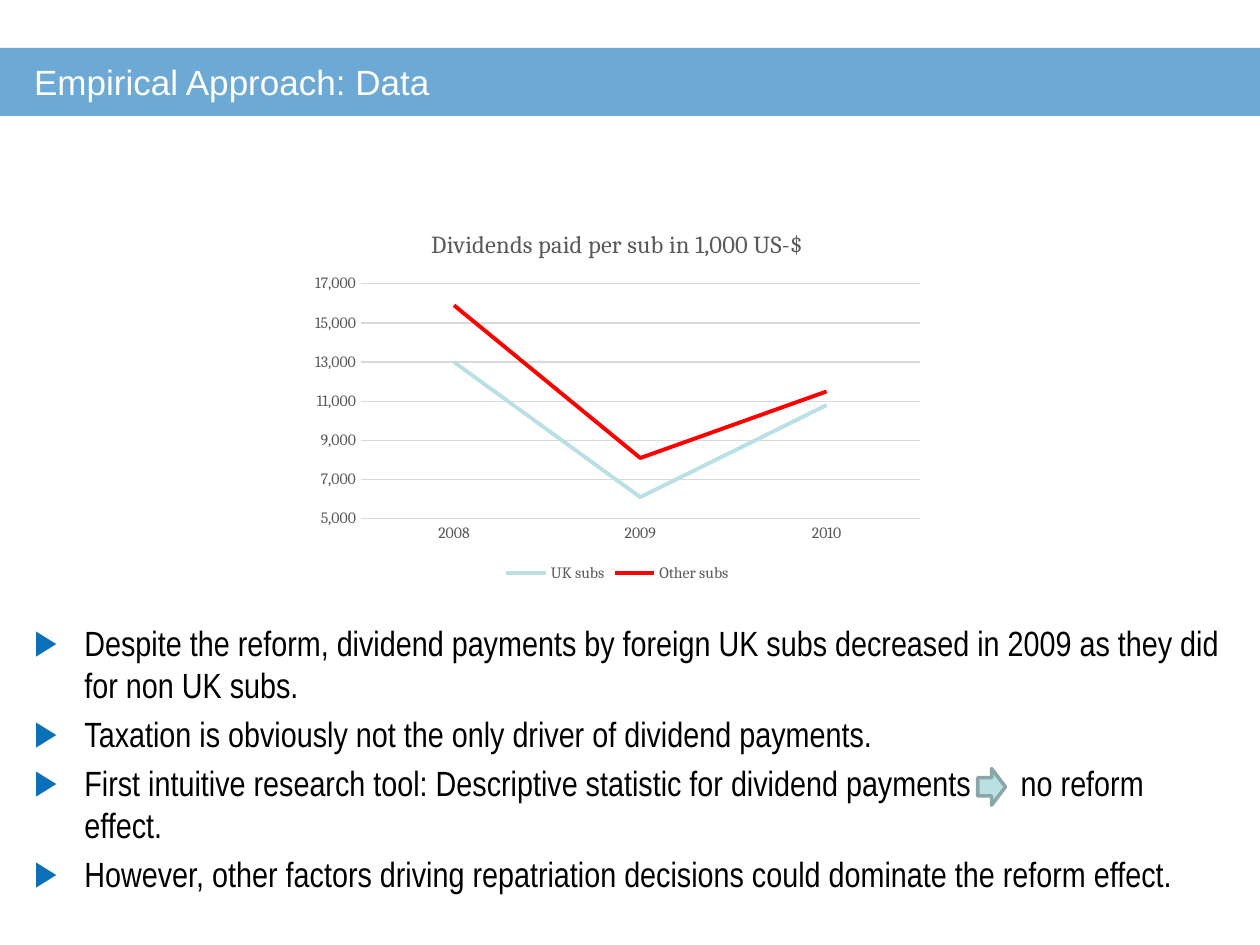
from lxml import etree
from pptx import Presentation
from pptx.chart.data import CategoryChartData
from pptx.dml.color import RGBColor
from pptx.enum.chart import XL_CHART_TYPE, XL_LEGEND_POSITION, XL_TICK_MARK
from pptx.enum.shapes import MSO_SHAPE
from pptx.enum.text import MSO_ANCHOR
from pptx.oxml.ns import qn
from pptx.util import Inches, Pt

LINE = XL_CHART_TYPE.LINE
BOTTOM = XL_LEGEND_POSITION.BOTTOM
NO_TICK = XL_TICK_MARK.NONE
RECT = MSO_SHAPE.RECTANGLE
ARROW = MSO_SHAPE.RIGHT_ARROW
MIDDLE = MSO_ANCHOR.MIDDLE

BLUE = RGBColor(0x0B, 0x70, 0xB8)
TEAL = RGBColor(0xBB, 0xE0, 0xE3)
EDGE = RGBColor(0x8A, 0xA6, 0xA8)
RED = RGBColor(0xFF, 0, 0)
GRAY = RGBColor(0x59, 0x59, 0x59)
GRID = RGBColor(0xD9, 0xD9, 0xD9)
WHITE = RGBColor(0xFF, 0xFF, 0xFF)
BLACK = RGBColor(0, 0, 0)

YEARS = ["2008", "2009", "2010"]
SERIES = [
    ("UK subs", (13000, 6100, 10800), TEAL),
    ("Other subs", (15900, 8100, 11500), RED),
]
POINTS = [
    ["Despite the reform, dividend payments by foreign UK subs "
     "decreased in 2009 as they did for non UK subs."],
    ["Taxation is obviously not the only driver of dividend payments."],
    ["First intuitive research tool: Descriptive statistic for "
     "dividend payments", " ", "no reform effect."],
    ["However, other factors driving repatriation decisions could "
     "dominate the reform effect."],
]


def place(*box):
    return [Inches(size) for size in box]


def style(font, name, size, color):
    font.name = name
    font.size = Pt(size)
    font.color.rgb = color


def add_fill(slide, kind, box, color):
    shape = slide.shapes.add_shape(kind, *place(*box))
    shape.shadow.inherit = False
    shape.fill.solid()
    shape.fill.fore_color.rgb = color
    shape.line.fill.background()
    return shape


def add_band(slide):
    band = add_fill(slide, RECT, (0, 0.38, 10, 0.54), BLUE)
    color = band.fill._xPr.find(".//" + qn("a:srgbClr"))
    etree.SubElement(color, qn("a:alpha"), val="60000")


def add_arrow(slide):
    arrow = add_fill(slide, ARROW, (7.76, 6.1, 0.22, 0.29), TEAL)
    arrow.line.color.rgb = EDGE
    arrow.line.width = Pt(2)


def add_box(slide, box):
    frame = slide.shapes.add_textbox(*place(*box)).text_frame
    frame.word_wrap = True
    frame.margin_left = frame.margin_right = 0
    frame.margin_top = frame.margin_bottom = 0
    return frame


def add_title(slide, text):
    frame = add_box(slide, (0.27, 0.38, 9.45, 0.54))
    frame.vertical_anchor = MIDDLE
    frame.text = text
    style(frame.paragraphs[0].runs[0].font, "Arial", 20, WHITE)


def add_bullet(para):
    props = para._p.get_or_add_pPr()
    props.set("marL", str(Inches(0.4)))
    props.set("indent", str(-Inches(0.4)))
    color = etree.SubElement(props, qn("a:buClr"))
    etree.SubElement(color, qn("a:srgbClr"), val=str(BLUE))
    etree.SubElement(props, qn("a:buFont"), typeface="Arial")
    etree.SubElement(props, qn("a:buChar"), char="▶")


def add_points(slide, points):
    frame = add_box(slide, (0.27, 4.93, 9.42, 2))
    for index, parts in enumerate(points):
        para = frame.add_paragraph() if index else frame.paragraphs[0]
        add_bullet(para)
        if index:
            para.space_before = Pt(4)
        for part in parts:
            run = para.add_run()
            run.text = part
            style(run.font, "Arial Narrow", 20, BLACK)
            if part == " ":
                run.font._element.set("spc", "2350")


def style_axis(axis):
    axis.major_tick_mark = axis.minor_tick_mark = NO_TICK
    style(axis.tick_labels.font, "Cambria", 9, GRAY)


def add_graph(slide):
    data = CategoryChartData(number_format="#,##0")
    data.categories = YEARS
    for name, values, _ in SERIES:
        data.add_series(name, values)
    box = place(2.4, 1.66, 5, 3)
    chart = slide.shapes.add_chart(LINE, *box, data).chart
    style(chart.font, "Cambria", 10, BLACK)

    chart.has_title = True
    title = chart.chart_title.text_frame
    title.text = "Dividends paid per sub in 1,000 US-$"
    font = title.paragraphs[0].runs[0].font
    style(font, "Cambria", 14, GRAY)
    font.bold = False

    chart.has_legend = True
    chart.legend.position = BOTTOM
    chart.legend.include_in_layout = False
    style(chart.legend.font, "Cambria", 9, GRAY)

    style_axis(chart.category_axis)
    base = chart.category_axis.format.line
    base.color.rgb = GRID
    base.width = Pt(0.75)

    axis = chart.value_axis
    style_axis(axis)
    axis.minimum_scale = 5000
    axis.maximum_scale = 17000
    axis.major_unit = 2000
    axis.tick_labels.number_format = "#,##0"
    axis.tick_labels.number_format_is_linked = False
    axis.format.line.fill.background()
    grid = axis.major_gridlines.format.line
    grid.color.rgb = GRID
    grid.width = Pt(0.75)

    chart.plots[0].vary_by_categories = False
    for series, (_, _, color) in zip(chart.plots[0].series, SERIES):
        series.smooth = False
        series.format.line.color.rgb = color
        series.format.line.width = Pt(2.25)


def main():
    deck = Presentation()
    deck.slide_width, deck.slide_height = place(10, 7.5)
    slide = deck.slides.add_slide(deck.slide_layouts[6])
    add_band(slide)
    add_points(slide, POINTS)
    add_title(slide, "Empirical Approach: Data")
    add_graph(slide)
    add_arrow(slide)
    deck.save("out.pptx")


if __name__ == "__main__":
    main()
